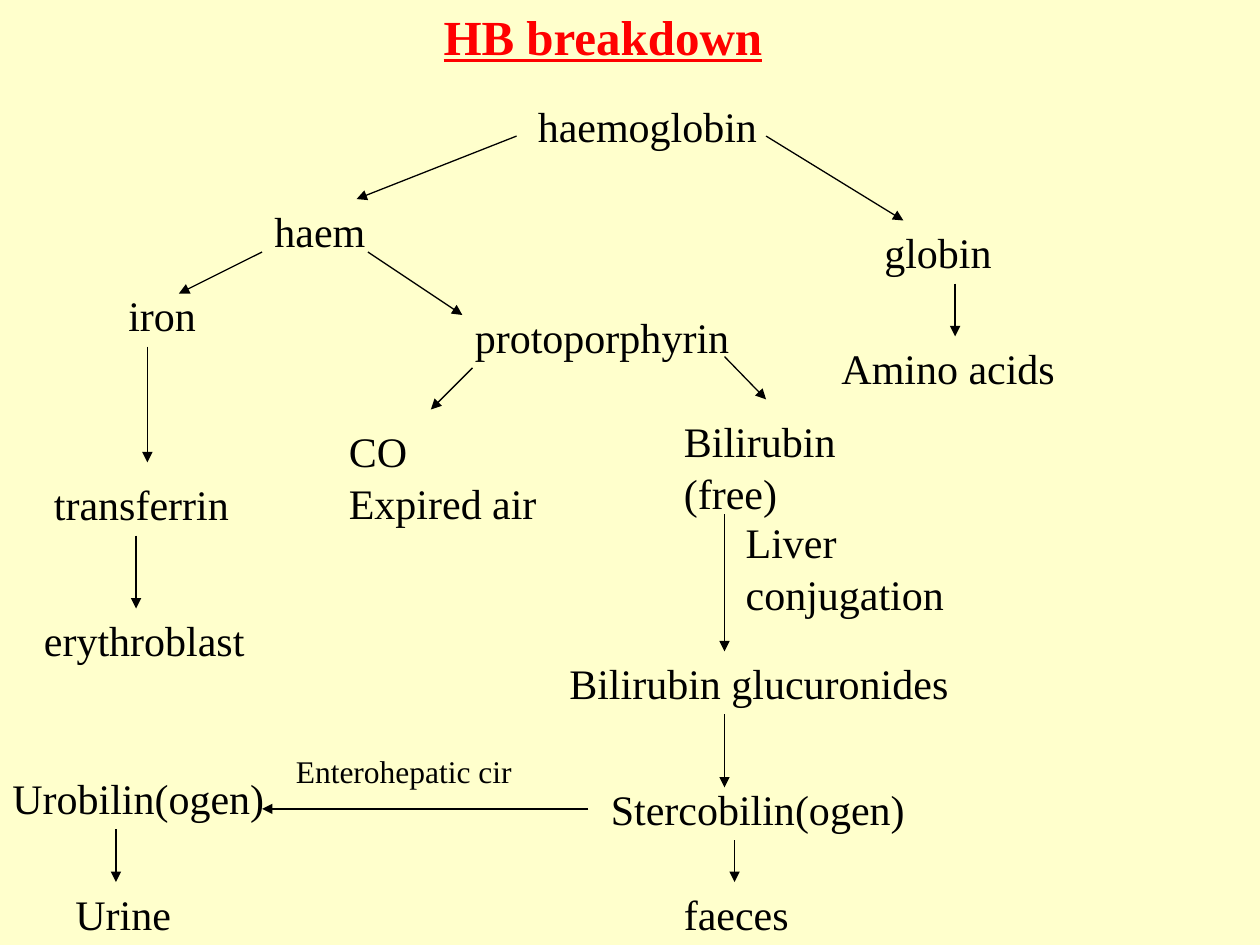
from lxml import etree
from pptx import Presentation
from pptx import util as u
from pptx.dml.color import RGBColor
from pptx.enum import shapes, text
from pptx.oxml import ns

CREAM = RGBColor(0xFF, 0xFF, 0xCC)
RED = RGBColor(0xFF, 0x00, 0x00)
BLACK = RGBColor(0x00, 0x00, 0x00)
FONT = "Times New Roman"

TITLE = ("HB breakdown", 3.42, 0, 2.76, 28)
LABELS = [
    ("haemoglobin", 4.17, 0.75, 1.94, 24),
    ("haem", 2.08, 1.58, 0.92, 24),
    ("protoporphyrin", 3.67, 2.42, 2.22, 24),
    ("iron", 0.92, 2.25, 0.74, 24),
    ("Bilirubin\n(free)", 5.33, 3.25, 1.4, 24),
    ("CO\nExpired air", 2.67, 3.33, 1.69, 24),
    ("transferrin", 0.33, 3.75, 1.59, 24),
    ("erythroblast", 0.25, 4.83, 1.79, 24),
    ("Bilirubin glucuronides", 4.42, 5.17, 3.21, 24),
    ("Stercobilin(ogen)", 4.75, 6.17, 2.53, 24),
    ("Urobilin(ogen)", 0, 6.08, 2.2, 24),
    ("Urine", 0.5, 7, 0.96, 24),
    ("Liver\nconjugation", 5.82, 4.05, 1.77, 24),
    ("faeces", 5.33, 7, 1.03, 24),
    ("globin", 6.92, 1.75, 1.05, 24),
    ("Amino acids", 6.58, 2.67, 1.89, 24),
    ("Enterohepatic cir", 2.25, 5.92, 1.93, 18),
]
ARROWS = [
    (4.1, 1.08, 2.83, 1.58),
    (6.08, 1.08, 7.17, 1.75),
    (2.92, 2, 3.67, 2.5),
    (2.08, 2, 1.42, 2.33),
    (3.75, 2.92, 3.42, 3.25),
    (5.75, 2.83, 6.08, 3.17),
    (1.17, 2.75, 1.17, 3.67),
    (1.08, 4.25, 1.08, 4.83),
    (5.75, 4.08, 5.75, 5.17),
    (4.67, 6.42, 2.08, 6.42),
    (5.75, 5.67, 5.75, 6.25),
    (0.92, 6.58, 0.92, 7),
    (5.83, 6.67, 5.83, 7),
    (7.58, 2.25, 7.58, 2.67),
]


def write(box, words, size, color=BLACK, heading=False):
    frame = box.text_frame
    frame.text = words
    frame.word_wrap = False
    frame.auto_size = text.MSO_AUTO_SIZE.NONE
    frame.vertical_anchor = text.MSO_ANCHOR.TOP
    for para in frame.paragraphs:
        para.alignment = text.PP_ALIGN.LEFT
        para.space_after = u.Pt(1)
        font = para.font
        font.name, font.size = FONT, u.Pt(size)
        font.color.rgb = color
        font.bold = font.underline = heading


def box_height(words, size):
    return round(0.1 + (words.count("\n") + 1) * size / 60, 2)


def add_label(page, words, left, top, width, size):
    height = box_height(words, size)
    box = page.shapes.add_textbox(*map(u.Inches, (left, top, width, height)))
    write(box, words, size)


def add_arrow(page, *ends):
    arrow = page.shapes.add_connector(shapes.MSO_CONNECTOR.STRAIGHT, *map(u.Inches, ends))
    arrow.line.color.rgb = BLACK
    arrow.line.width = u.Pt(0.75)
    etree.SubElement(arrow.line._get_or_add_ln(), ns.qn("a:tailEnd"), type="triangle")
    etree.SubElement(arrow._element.spPr, ns.qn("a:effectLst"))


def main():
    deck = Presentation()
    deck.slide_width, deck.slide_height = u.Inches(10), u.Inches(7.5)
    page = deck.slides.add_slide(deck.slide_layouts.get_by_name("Title Only"))
    page.background.fill.solid()
    page.background.fill.fore_color.rgb = CREAM

    words, left, top, width, size = TITLE
    title = page.shapes.title
    title.left, title.top = u.Inches(left), u.Inches(top)
    title.width, title.height = u.Inches(width), u.Inches(box_height(words, size))
    write(title, words, size, RED, heading=True)

    for label in LABELS:
        add_label(page, *label)
    for ends in ARROWS:
        add_arrow(page, *ends)
    deck.save("out.pptx")


if __name__ == "__main__":
    main()
